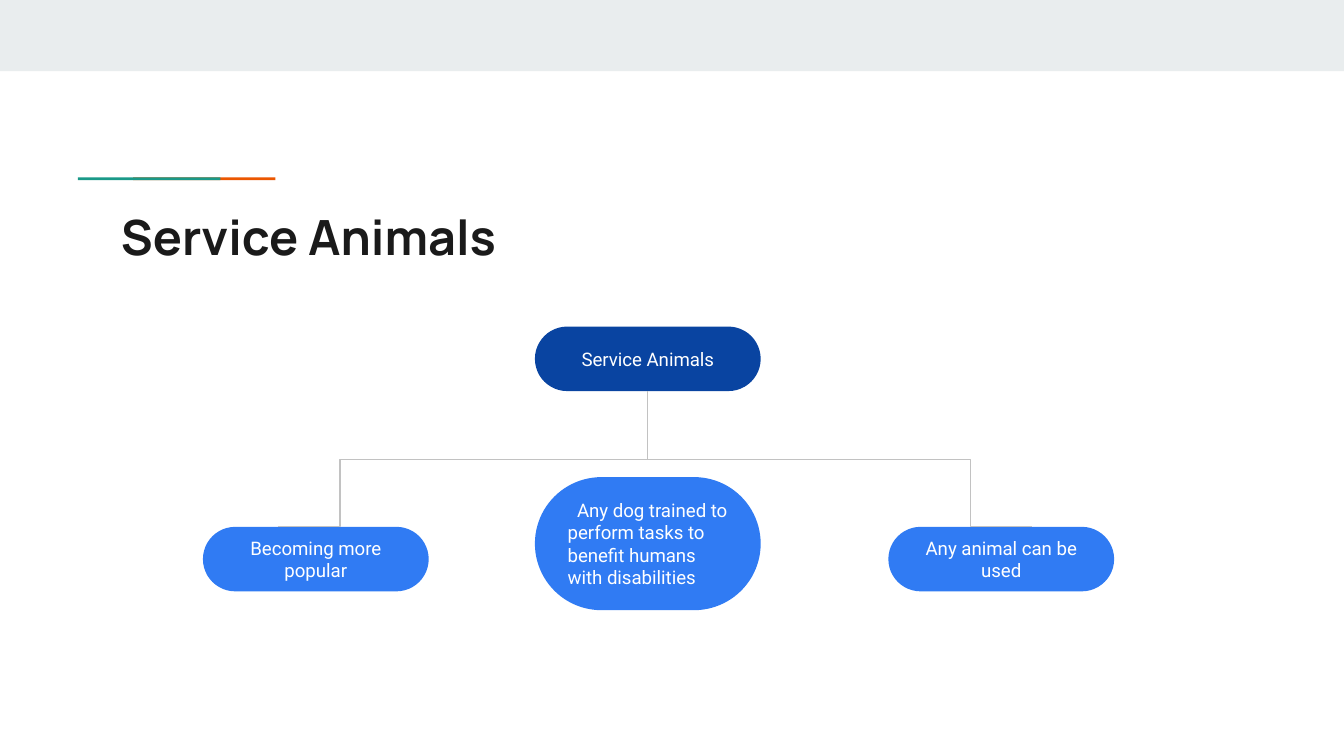
from pptx import Presentation
from pptx import util as u
from pptx.dml.color import RGBColor
from pptx.enum import shapes, text
from pptx.oxml.ns import qn
from lxml import etree

GREY = RGBColor(0xE9, 0xED, 0xEE)
RUST = RGBColor(0xEB, 0x56, 0x00)
TEAL = RGBColor(0x1A, 0x99, 0x88)
INK = RGBColor(0x1A, 0x1A, 0x1A)
NAVY = RGBColor(0x09, 0x44, 0xA1)
BLUE = RGBColor(0x30, 0x7B, 0xF3)
WHITE = RGBColor(0xFF, 0xFF, 0xFF)
WIRE = RGBColor(0xC2, 0xC2, 0xC2)

TITLE = "Service Animals"
MID = 4.82
WIDE, HIGH = 1.68, 0.48
BUS = 3.42
LEAF = 3.92
ROOT = ("Service Animals", MID, 2.43, HIGH, NAVY, True)
LEAVES = [
    ("Becoming more popular", 2.35, LEAF, HIGH, BLUE, True),
    ("Any dog trained to perform tasks to benefit humans with disabilities",
     MID, 3.55, 0.99, BLUE, False),
    ("Any animal can be used", 7.45, LEAF, HIGH, BLUE, True),
]
BARS = [
    (0, 0, 10, 0.53, GREY),
    (0.99, 1.32, 1.06, 0.02, RUST),
    (0.58, 1.32, 1.06, 0.02, TEAL),
]
STRAIGHT = shapes.MSO_CONNECTOR.STRAIGHT
ELBOW = shapes.MSO_CONNECTOR.ELBOW
WIRES = [
    (STRAIGHT, 2.89, BUS, 6.76, BUS),
    (ELBOW, 2.07, LEAF, 2.99, BUS),
    (ELBOW, 6.76, BUS, 7.68, LEAF),
]


def add_box(slide, kind, x, y, w, h, fill):
    box = slide.shapes.add_shape(kind, *map(u.Inches, (x, y, w, h)))
    box.shadow.inherit = False
    box.fill.solid()
    box.fill.fore_color.rgb = fill
    box.line.fill.background()
    return box


def add_text(frame, words, face, size, color, bold=False):
    frame.word_wrap = True
    frame.margin_left = frame.margin_right = u.Inches(0.1)
    frame.margin_top = frame.margin_bottom = u.Inches(0.1)
    para = frame.paragraphs[0]
    run = para.add_run()
    run.text = words
    run.font.name = face
    run.font.size = u.Pt(size)
    run.font.bold = bold
    run.font.color.rgb = color
    return para


def add_pill(slide, words, mid, top, high, fill, center):
    pill = add_box(slide, shapes.MSO_SHAPE.ROUNDED_RECTANGLE,
                   mid - WIDE / 2, top, WIDE, high, fill)
    pill.adjustments[0] = 0.5
    frame = pill.text_frame
    frame.vertical_anchor = text.MSO_ANCHOR.MIDDLE
    para = add_text(frame, words, "Roboto", 10, WHITE)
    if center:
        para.alignment = text.PP_ALIGN.CENTER
    else:
        para.alignment = text.PP_ALIGN.LEFT
        para._p.get_or_add_pPr().set("indent", str(u.Inches(0.07)))
    return pill


def add_wire(slide, kind, *ends):
    wire = slide.shapes.add_connector(kind, *map(u.Inches, ends))
    wire.line.color.rgb = WIRE
    wire.line.width = u.Pt(0.75)
    etree.SubElement(wire._element.spPr, qn("a:effectLst"))
    return wire


def main():
    deck = Presentation()
    deck.slide_width = u.Inches(10)
    deck.slide_height = deck.slide_width * 9 // 16
    slide = deck.slides.add_slide(deck.slide_layouts[5])

    for x, y, w, h, fill in BARS:
        add_box(slide, shapes.MSO_SHAPE.RECTANGLE, x, y, w, h, fill)

    title = slide.shapes.title
    title.left, title.top = u.Inches(0.8), u.Inches(1.44)
    title.width, title.height = u.Inches(8.41), u.Inches(0.59)
    frame = title.text_frame
    frame.auto_size = text.MSO_AUTO_SIZE.NONE
    frame.vertical_anchor = text.MSO_ANCHOR.TOP
    para = add_text(frame, TITLE, "Manrope", 26, INK, True)
    para.alignment = text.PP_ALIGN.LEFT

    root = add_pill(slide, *ROOT)
    for leaf in LEAVES:
        add_pill(slide, *leaf)

    stem = add_wire(slide, STRAIGHT, MID, 2.91, MID, BUS)
    stem.begin_connect(root, 2)
    for wire in WIRES:
        add_wire(slide, *wire)

    deck.save("out.pptx")


if __name__ == "__main__":
    main()
